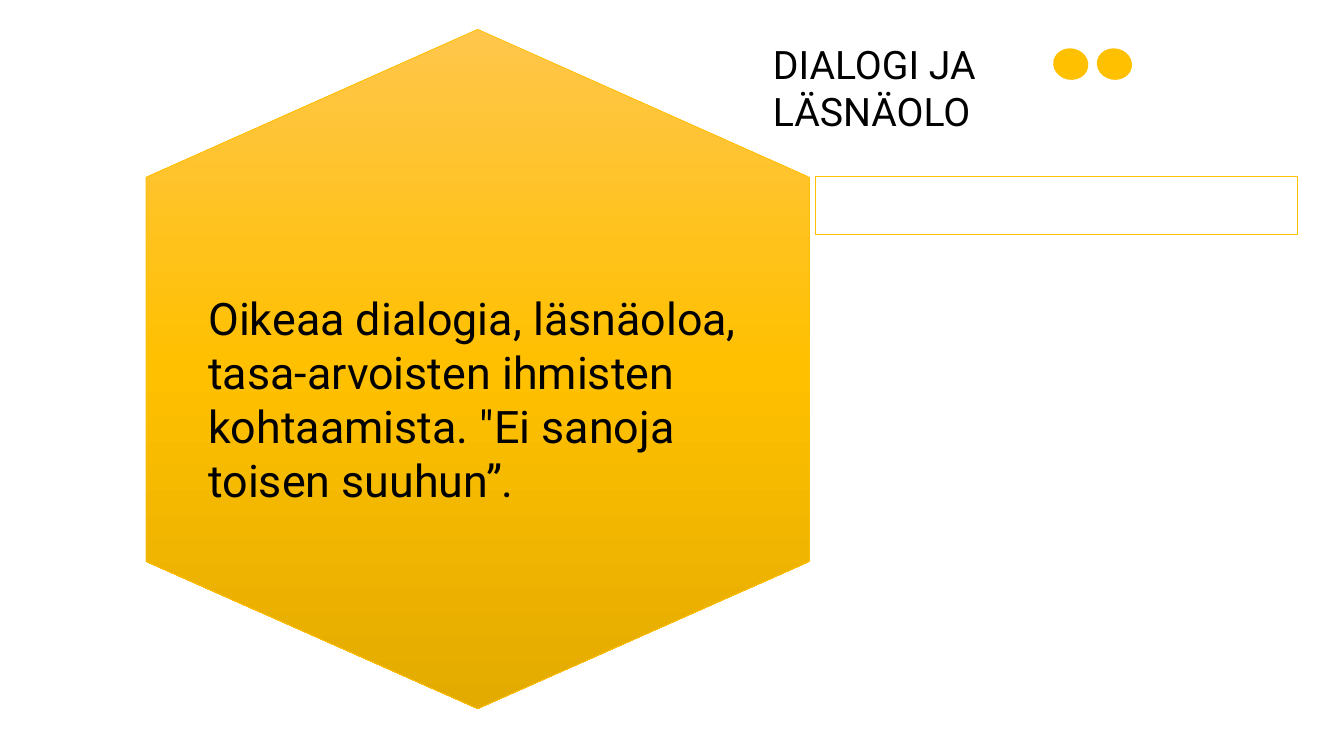
"""Build the slide on dialogue and presence with its golden hexagon."""
import copy

import pptx
import pptx.dml.color
import pptx.enum.shapes
import pptx.enum.text
import pptx.oxml.ns
import pptx.util

Cm = pptx.util.Cm
Pt = pptx.util.Pt
PRESET = pptx.enum.shapes.MSO_SHAPE
COLORS = {"gold": "FFC000", "light": "FFC64B", "dark": "E3AB00", "text": "000000"}


def rgb(name):
    return pptx.dml.color.RGBColor.from_string(COLORS[name])


def add_text(text, left, top, width, height, size, font="Roboto", color="text"):
    frame = slide.shapes.add_textbox(Cm(left), Cm(top), Cm(width), Cm(height)).text_frame
    frame.word_wrap = True
    frame.auto_size = pptx.enum.text.MSO_AUTO_SIZE.SHAPE_TO_FIT_TEXT
    frame.text = text
    for paragraph in frame.paragraphs:
        paragraph.font.name = font
        paragraph.font.size = Pt(size)
        paragraph.font.color.rgb = rgb(color)


deck = pptx.Presentation()
deck.slide_width = Cm(33.87)
deck.slide_height = Cm(19.05)
slide = deck.slides.add_slide(deck.slide_layouts[6])

corners = [(12.04, 0.74), (20.4, 4.47), (20.4, 14.15),
           (12.04, 17.86), (3.68, 14.15), (3.68, 4.47)]
points = [(Cm(x), Cm(y)) for x, y in corners]
outline = slide.shapes.build_freeform(*points[0])
outline.add_line_segments(points[1:], close=True)
hexagon = outline.convert_to_shape()
hexagon.shadow.inherit = False
hexagon.line.color.rgb = rgb("gold")
hexagon.line.width = Pt(0.5)
hexagon.fill.gradient()
hexagon.fill.gradient_angle = 270
stop_list = hexagon.element.spPr.find(".//" + pptx.oxml.ns.qn("a:gsLst"))
stop_list.append(copy.deepcopy(stop_list[-1]))
shades = [(0, "light"), (0.5, "gold"), (1, "dark")]
for stop, (position, shade) in zip(hexagon.fill.gradient_stops, shades):
    stop.position = position
    stop.color.rgb = rgb(shade)

add_text("Oikeaa dialogia, läsnäoloa, tasa-arvoisten ihmisten kohtaamista. "
         "\"Ei sanoja toisen suuhun”.",
         left=5, top=7.21, width=15.34, height=6.48, size=32)

frame_bar = slide.shapes.add_shape(PRESET.RECTANGLE, Cm(20.55), Cm(4.45), Cm(12.14), Cm(1.45))
frame_bar.shadow.inherit = False
frame_bar.fill.background()
frame_bar.line.color.rgb = rgb("gold")
frame_bar.line.width = Pt(0.75)

for dot_left in (27.69, 26.59):
    dot = slide.shapes.add_shape(PRESET.OVAL, Cm(dot_left), Cm(1.17), Cm(0.79), Cm(0.89))
    dot.rotation = 281.1
    dot.shadow.inherit = False
    dot.fill.solid()
    dot.fill.fore_color.rgb = rgb("gold")
    dot.line.fill.background()

add_text("DIALOGI JA\nLÄSNÄOLO", left=19.23, top=0.89, width=12.8, height=2.64, size=28)

deck.save("out.pptx")
